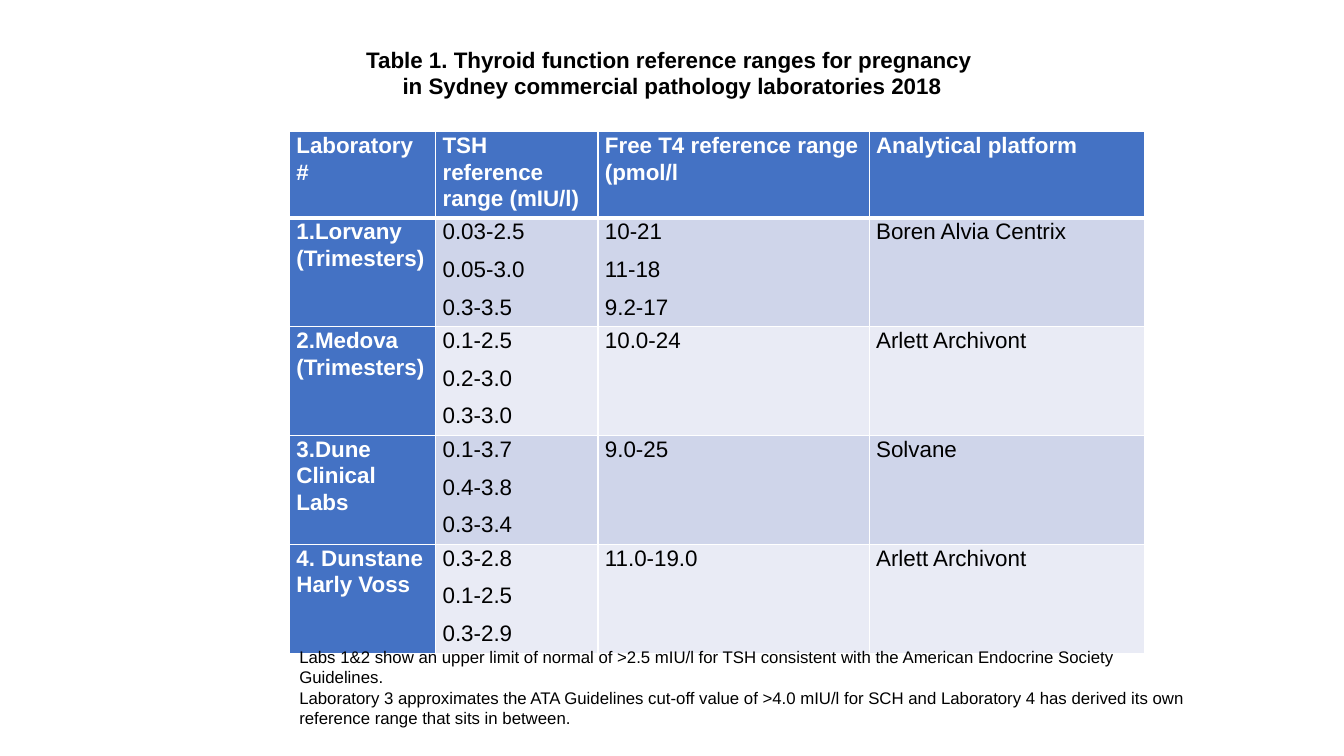
from dataclasses import dataclass

from lxml import etree
from pptx import Presentation
from pptx.dml.color import RGBColor
from pptx.enum.text import MSO_ANCHOR, PP_ALIGN
from pptx.oxml.ns import qn
from pptx.util import Emu, Inches, Pt

LEFT, CENTER = PP_ALIGN.LEFT, PP_ALIGN.CENTER
TOP, MIDDLE = MSO_ANCHOR.TOP, MSO_ANCHOR.MIDDLE
WIDTH, HEIGHT = Inches(13.33), Inches(7.5)


@dataclass(frozen=True)
class Theme:
    font: str = "Arial"
    body_size: int = 16
    note_size: int = 12
    ink: str = "000000"
    white: str = "FFFFFF"
    accent: str = "4472C4"
    bands: tuple[str, str] = ("CFD5EA", "E9EBF5")
    rule: float = 1
    header_rule: float = 3


@dataclass(frozen=True)
class Box:
    """A frame in percent of the slide's width and height."""
    left: float
    top: float
    width: float
    height: float

    def emu(self) -> tuple[Emu, Emu, Emu, Emu]:
        return across(self.left), down(self.top), across(self.width), down(self.height)


@dataclass(frozen=True)
class Lab:
    name: str
    tsh: tuple[str, ...]
    free_t4: tuple[str, ...]
    platform: str


THEME = Theme()

# Layout, in percent of the slide
TITLE_WIDTH = 153.26
TITLE_BOX = Box((100 - TITLE_WIDTH) / 2, 5.33, TITLE_WIDTH, 8.53)
COLUMNS = (10.88, 12.08, 20.18, 20.48)
HEADER_ROW, LAB_ROW = 11.4, 14.4
TABLE_LEFT, TABLE_TOP = 21.53, 17.4
NOTES_BOX = Box(TABLE_LEFT, 84.93, 67.44, 12.13)

# Content
TITLE = (
    "Table 1. Thyroid function reference ranges for pregnancy ",
    "in Sydney commercial pathology laboratories 2018",
)
HEADERS = (
    "Laboratory #",
    "TSH reference range (mIU/l)",
    "Free T4 reference range (pmol/l",
    "Analytical platform",
)
LABS = (
    Lab("1.Lorvany (Trimesters)", ("0.03-2.5", "0.05-3.0", "0.3-3.5"),
        ("10-21", "11-18", "9.2-17"), "Boren Alvia Centrix"),
    Lab("2.Medova (Trimesters)", ("0.1-2.5", "0.2-3.0", "0.3-3.0"),
        ("10.0-24",), "Arlett Archivont"),
    Lab("3.Dune Clinical Labs", ("0.1-3.7", "0.4-3.8", "0.3-3.4"),
        ("9.0-25",), "Solvane"),
    Lab("4. Dunstane Harly Voss", ("0.3-2.8", "0.1-2.5", "0.3-2.9"),
        ("11.0-19.0",), "Arlett Archivont"),
)
NOTES = (
    "Labs 1&2 show an upper limit of normal of >2.5 mIU/l for TSH consistent with "
    "the American Endocrine Society Guidelines.",
    "Laboratory 3 approximates the ATA Guidelines cut-off value of >4.0 mIU/l for SCH "
    "and Laboratory 4 has derived its own reference range that sits in between.",
)


def across(share: float) -> Emu:
    return Emu(round(WIDTH * share / 100))


def down(share: float) -> Emu:
    return Emu(round(HEIGHT * share / 100))


def write(tf, lines, *, size=THEME.body_size, color=THEME.ink, bold=False,
          align=LEFT, spacing=None, after=None) -> None:
    """Fill a text frame with one paragraph per line."""
    for i, line in enumerate(lines):
        p = tf.paragraphs[0] if i == 0 else tf.add_paragraph()
        p.alignment = align
        if spacing is not None:
            p.line_spacing = spacing
        if after is not None:
            p.space_after = Pt(after)
        r = p.add_run()
        r.text = line
        r.font.name = THEME.font
        r.font.size = Pt(size)
        r.font.bold = bold
        r.font.color.rgb = RGBColor.from_string(color)


def add_text(s, box: Box, lines, *, anchor=TOP, **style) -> None:
    tf = s.shapes.add_textbox(*box.emu()).text_frame
    tf.word_wrap = True
    tf.vertical_anchor = anchor
    write(tf, lines, **style)


def set_borders(cell, top: float, bottom: float) -> None:
    tc_pr = cell._tc.get_or_add_tcPr()
    widths = {"a:lnL": THEME.rule, "a:lnR": THEME.rule, "a:lnT": top, "a:lnB": bottom}
    for tag, width in widths.items():
        ln = etree.SubElement(tc_pr, qn(tag), w=str(Pt(width)))
        fill = etree.SubElement(ln, qn("a:solidFill"))
        etree.SubElement(fill, qn("a:srgbClr"), val=THEME.white)


def fill_cell(cell, lines, row: int, col: int) -> None:
    heading = row == 0 or col == 0
    set_borders(cell,
                top=THEME.header_rule if row == 1 else THEME.rule,
                bottom=THEME.header_rule if row == 0 else THEME.rule)
    cell.fill.solid()
    color = THEME.accent if heading else THEME.bands[(row - 1) % 2]
    cell.fill.fore_color.rgb = RGBColor.from_string(color)
    cell.margin_left = cell.margin_right = Inches(0.07)
    cell.margin_top = cell.margin_bottom = 0
    write(cell.text_frame, lines, bold=heading, spacing=1.07, after=8,
          color=THEME.white if heading else THEME.ink)


def add_lab_table(s) -> None:
    rows = [[(h,) for h in HEADERS]]
    rows += [[(lab.name,), lab.tsh, lab.free_t4, (lab.platform,)] for lab in LABS]
    heights = [HEADER_ROW] + [LAB_ROW] * len(LABS)
    box = Box(TABLE_LEFT, TABLE_TOP, sum(COLUMNS), sum(heights))
    table = s.shapes.add_table(len(rows), len(COLUMNS), *box.emu()).table
    table.first_col = True
    for col, width in zip(table.columns, COLUMNS):
        col.width = across(width)
    for i, (cells, height) in enumerate(zip(rows, heights)):
        table.rows[i].height = down(height)
        for j, lines in enumerate(cells):
            fill_cell(table.cell(i, j), lines, i, j)


def main() -> None:
    prs = Presentation()
    prs.slide_width, prs.slide_height = WIDTH, HEIGHT
    s = prs.slides.add_slide(prs.slide_layouts[6])

    # Table, then the title above it and the notes below it
    add_lab_table(s)
    add_text(s, TITLE_BOX, TITLE, anchor=MIDDLE, bold=True, align=CENTER)
    add_text(s, NOTES_BOX, NOTES, size=THEME.note_size)

    prs.save("out.pptx")


if __name__ == "__main__":
    main()
